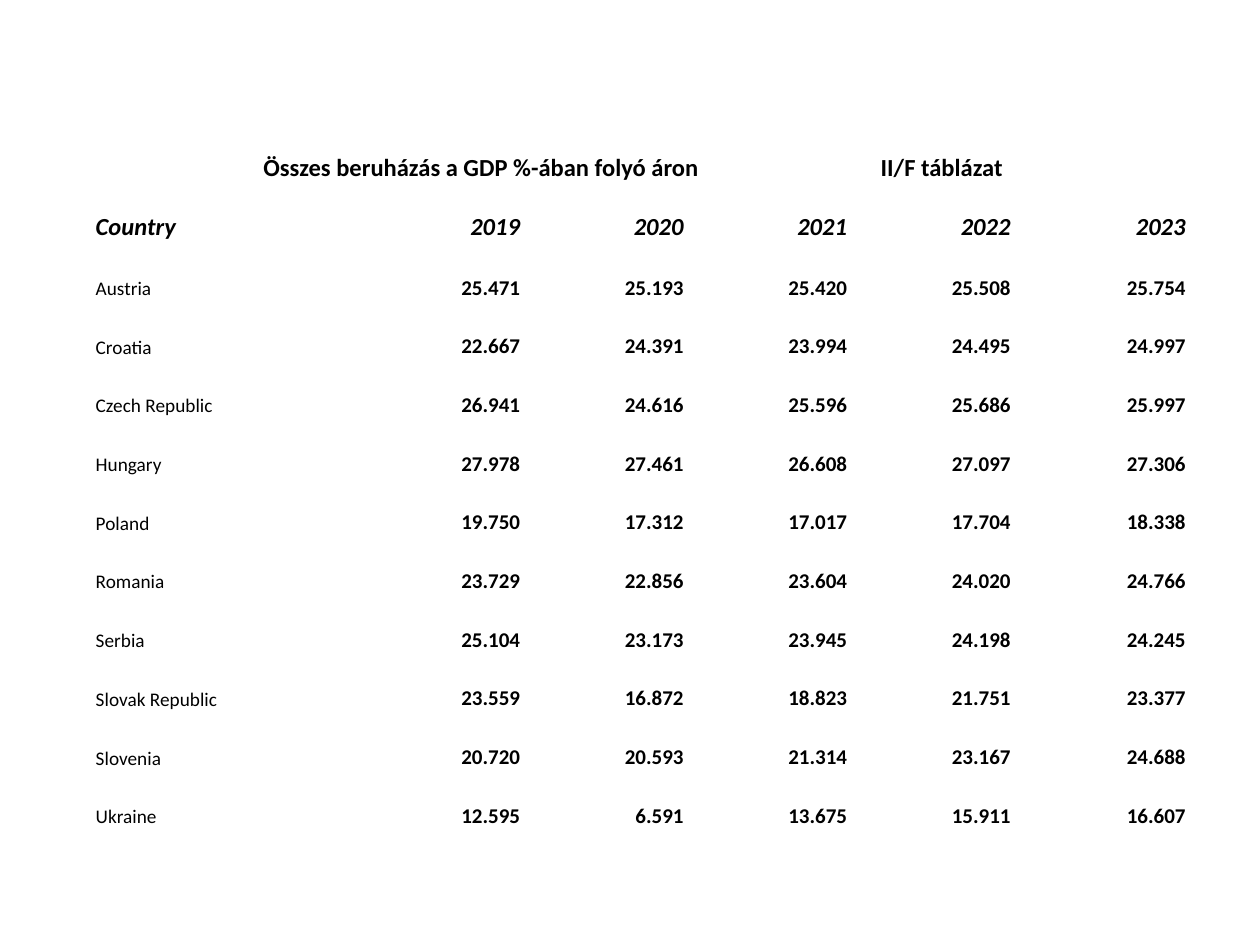
"""Build a slide with a table of total investment as a share of GDP."""
from dataclasses import dataclass

from lxml import etree
from pptx import Presentation
from pptx.dml.color import RGBColor
from pptx.enum.text import MSO_ANCHOR, PP_ALIGN
from pptx.oxml.ns import qn
from pptx.table import Table, _Cell
from pptx.util import Inches, Pt

LEFT, RIGHT = PP_ALIGN.LEFT, PP_ALIGN.RIGHT
BOTTOM = MSO_ANCHOR.BOTTOM
BLACK = RGBColor(0, 0, 0)
FONT = "Calibri"
WIDTH, HEIGHT = Inches(10), Inches(7.5)
X, Y, W, H = Inches(0.75), Inches(0.99), Inches(8.58), Inches(5.59)
FIRST = Inches(2.09)
PAD = Inches(0.01)
INDENT, TAB = Inches(1.34), Inches(4.9)
TITLE = "Összes beruházás a GDP %-ában folyó áron\tII/F táblázat"
YEARS = ("2019", "2020", "2021", "2022", "2023")


@dataclass(frozen=True)
class Land:
    name: str
    rates: tuple[float, ...]


LANDS = (
    Land("Austria", (25.471, 25.193, 25.420, 25.508, 25.754)),
    Land("Croatia", (22.667, 24.391, 23.994, 24.495, 24.997)),
    Land("Czech Republic", (26.941, 24.616, 25.596, 25.686, 25.997)),
    Land("Hungary", (27.978, 27.461, 26.608, 27.097, 27.306)),
    Land("Poland", (19.750, 17.312, 17.017, 17.704, 18.338)),
    Land("Romania", (23.729, 22.856, 23.604, 24.020, 24.766)),
    Land("Serbia", (25.104, 23.173, 23.945, 24.198, 24.245)),
    Land("Slovak Republic", (23.559, 16.872, 18.823, 21.751, 23.377)),
    Land("Slovenia", (20.720, 20.593, 21.314, 23.167, 24.688)),
    Land("Ukraine", (12.595, 6.591, 13.675, 15.911, 16.607)),
)


def write(cell: _Cell, text: str, *, size: float = 12, bold: bool = True,
          italic: bool = False, align: PP_ALIGN = RIGHT) -> None:
    """Put formatted text at the foot of a cell."""
    cell.vertical_anchor = BOTTOM
    cell.margin_left = cell.margin_right = cell.margin_top = PAD
    cell.margin_bottom = 0
    para = cell.text_frame.paragraphs[0]
    para.alignment = align
    run = para.add_run()
    run.text = text
    font = run.font
    font.name, font.size = FONT, Pt(size)
    font.bold, font.italic = bold, italic
    font.color.rgb = BLACK


def head(table: Table) -> None:
    """Fill the merged title row, with a tab stop before the table number."""
    cell = table.cell(0, 0)
    cell.merge(table.cell(0, len(YEARS)))
    write(cell, TITLE, size=14, align=LEFT)
    cell.margin_left = INDENT
    para = cell.text_frame.paragraphs[0]
    stops = etree.SubElement(para._p.get_or_add_pPr(), qn("a:tabLst"))
    etree.SubElement(stops, qn("a:tab"), pos=str(TAB), algn="l")


def fill(table: Table) -> None:
    """Fill the year row and one row for each country."""
    write(table.cell(1, 0), "Country", size=14, italic=True, align=LEFT)
    for col, year in enumerate(YEARS, 1):
        write(table.cell(1, col), year, size=14, italic=True)
    for row, land in enumerate(LANDS, 2):
        write(table.cell(row, 0), land.name, size=11, bold=False, align=LEFT)
        for col, rate in enumerate(land.rates, 1):
            write(table.cell(row, col), f"{rate:.3f}")


def main() -> None:
    """Build and save the slide."""
    deck = Presentation()
    deck.slide_width, deck.slide_height = WIDTH, HEIGHT
    slide = deck.slides.add_slide(deck.slide_layouts[6])
    rows, cols = len(LANDS) + 2, len(YEARS) + 1
    table = slide.shapes.add_table(rows, cols, X, Y, W, H).table
    table.first_row = table.horz_banding = False
    for num, col in enumerate(table.columns):
        col.width = (W - FIRST) // len(YEARS) if num else FIRST
    for cell in table.iter_cells():
        cell.fill.background()
    head(table)
    fill(table)
    deck.save("out.pptx")


if __name__ == "__main__":
    main()
